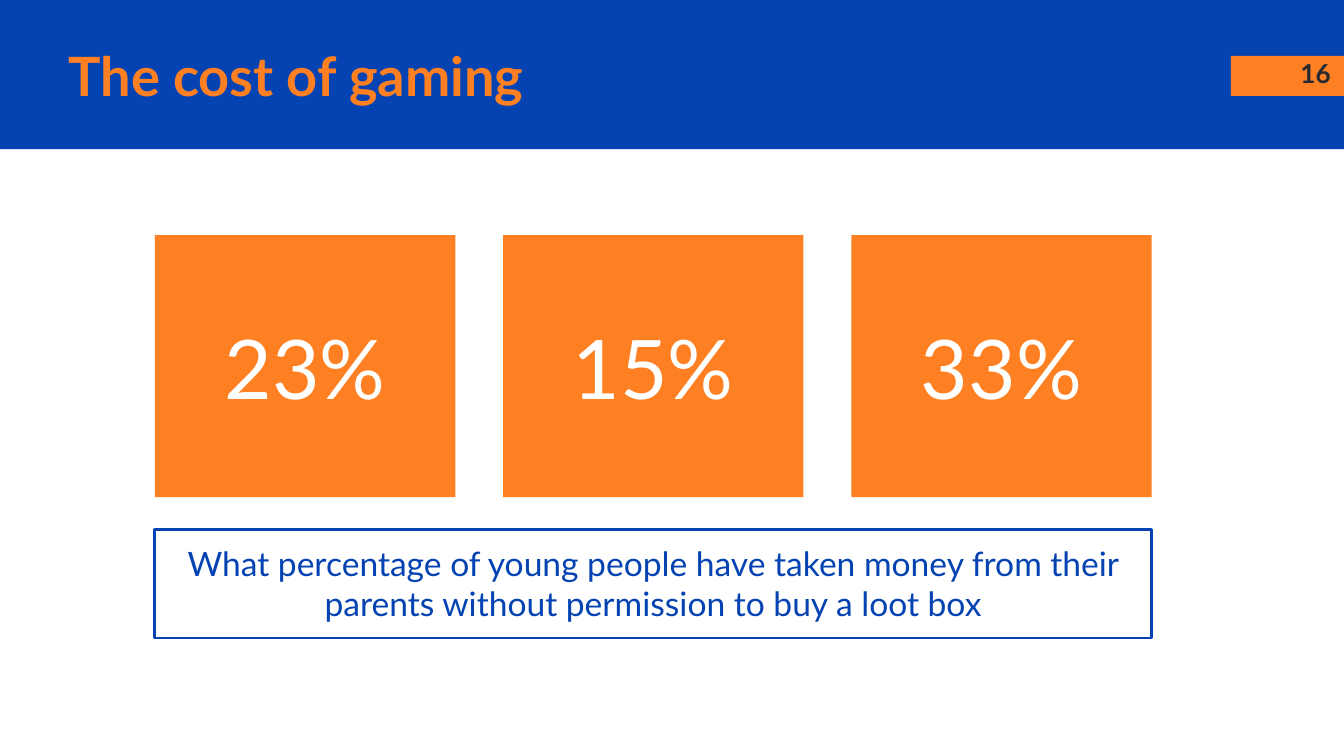
from pptx import Presentation
from pptx.dml.color import RGBColor
from pptx.enum.shapes import MSO_SHAPE
from pptx.enum.text import MSO_ANCHOR, PP_ALIGN
from pptx.util import Pt

RECTANGLE = MSO_SHAPE.RECTANGLE
TOP, MIDDLE = MSO_ANCHOR.TOP, MSO_ANCHOR.MIDDLE
LEFT, CENTER, RIGHT = PP_ALIGN.LEFT, PP_ALIGN.CENTER, PP_ALIGN.RIGHT
FONT = "Lato"
BLUE, ORANGE, DARK, WHITE = "0543B3", "FF8022", "262A33", "FFFFFF"
SLIDE_WIDTH, SLIDE_HEIGHT = 720, 405


def color(hex_string):
    return RGBColor.from_string(hex_string)


def add_rectangle(slide, box, fill=None, line=None):
    shape = slide.shapes.add_shape(RECTANGLE, *map(Pt, box))
    shape.shadow.inherit = False
    if fill:
        shape.fill.solid()
        shape.fill.fore_color.rgb = color(fill)
    else:
        shape.fill.background()
    if line:
        shape.line.color.rgb = color(line)
        shape.line.width = Pt(1.5)
    else:
        shape.line.fill.background()
    return shape


def write_text(shape, text, size, text_color, align, anchor, bold=False):
    frame = shape.text_frame
    frame.word_wrap = True
    frame.vertical_anchor = anchor
    frame.margin_left = frame.margin_right = Pt(7.2)
    frame.margin_top = frame.margin_bottom = Pt(7.2)
    paragraph = frame.paragraphs[0]
    paragraph.text = text
    paragraph.alignment = align
    paragraph.font.name = FONT
    paragraph.font.size = Pt(size)
    paragraph.font.bold = bold
    paragraph.font.color.rgb = color(text_color)


def add_header(slide, box, title, number):
    left, top, width, height = box
    right = left + width
    add_rectangle(slide, box, BLUE)
    add_rectangle(slide, (right - 60.6, top + 30, 60.6, 21.4), ORANGE)
    number_box = slide.shapes.add_textbox(Pt(right - 43), Pt(top + 23.8), Pt(43), Pt(31))
    write_text(number_box, number, 14, DARK, RIGHT, TOP, bold=True)
    title_box = slide.shapes.add_textbox(Pt(left + 29.7), Pt(top + 20.2), Pt(609), Pt(40.3))
    write_text(title_box, title, 29, ORANGE, LEFT, MIDDLE, bold=True)


def add_answer_cards(slide, box, answers, gap):
    left, top, width, height = box
    card_width = (width - gap * (len(answers) - 1)) / len(answers)
    for index, answer in enumerate(answers):
        card_left = left + index * (card_width + gap)
        card = add_rectangle(slide, (card_left, top, card_width, height), ORANGE)
        write_text(card, answer, 44, WHITE, CENTER, MIDDLE)


def add_question(slide, box, question):
    shape = add_rectangle(slide, box, line=BLUE)
    write_text(shape, question, 18, BLUE, CENTER, TOP)


def main():
    presentation = Presentation()
    presentation.slide_width = Pt(SLIDE_WIDTH)
    presentation.slide_height = Pt(SLIDE_HEIGHT)
    slide = presentation.slides.add_slide(presentation.slide_layouts[6])
    add_header(slide, (0, 0, SLIDE_WIDTH, 80), "The cost of gaming", "16")
    add_answer_cards(slide, (83, 126, 534, 140.4), ("23%", "15%", "33%"), gap=25.6)
    add_question(
        slide,
        (83, 283.6, 534, 58.2),
        "What percentage of young people have taken money from their "
        "parents without permission to buy a loot box",
    )
    presentation.save("out.pptx")


if __name__ == "__main__":
    main()
